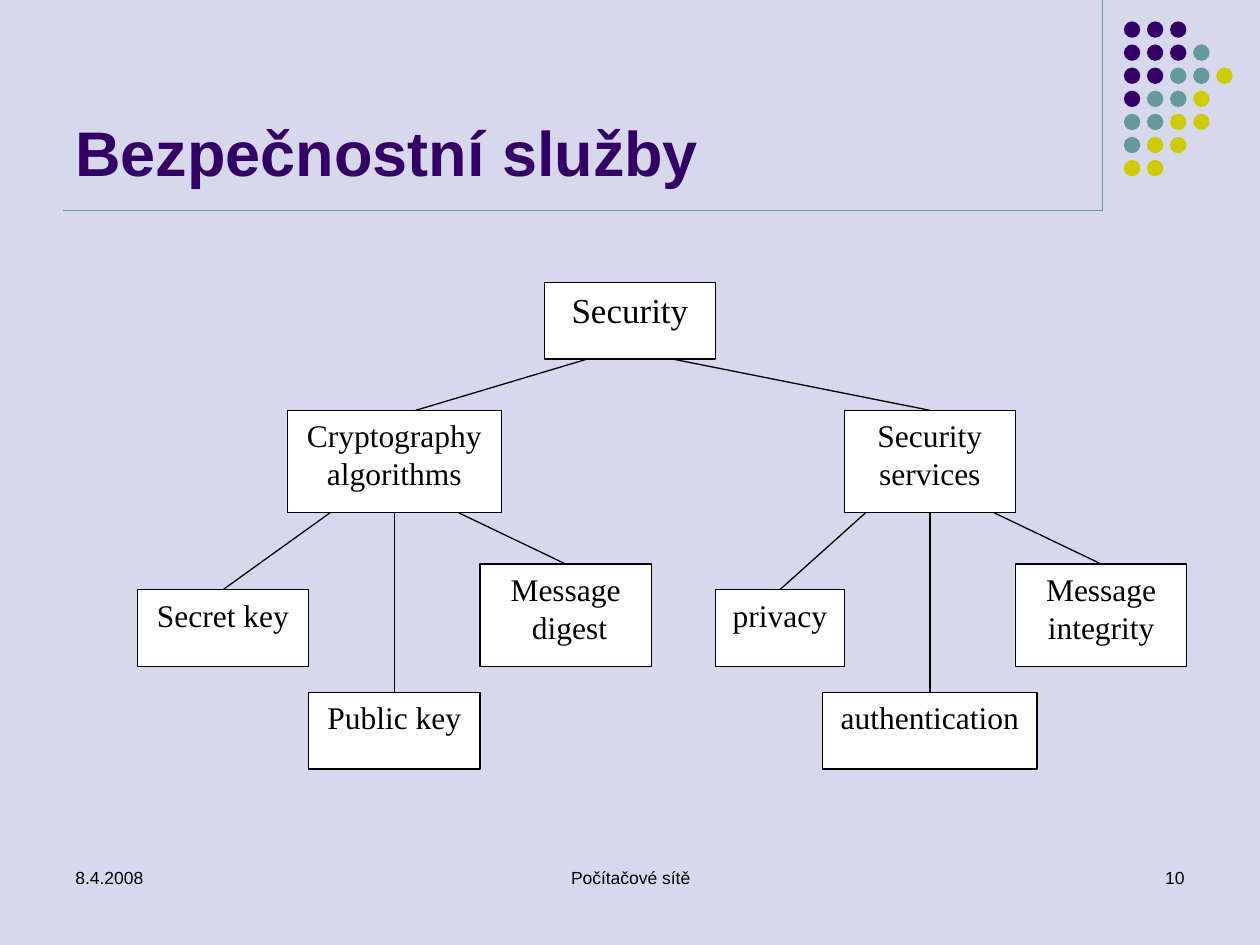
"""Build a slide with a tree of security services."""
from dataclasses import dataclass

from lxml import etree
from pptx import Presentation
from pptx.dml.color import RGBColor
from pptx.enum import shapes, text
from pptx.oxml import ns
from pptx.util import Inches, Pt


@dataclass(frozen=True)
class Theme:
    back: str = "D8D8EC"
    deep: str = "330066"
    teal: str = "669999"
    lime: str = "CCCC00"
    ink: str = "000000"
    paper: str = "FFFFFF"
    sans: str = "Arial"
    serif: str = "Times New Roman"
    title: int = 36
    root: int = 20
    node: int = 18
    foot: int = 10
    line: float = 0.75


T = Theme()
A = text.PP_ALIGN

TITLE = "Bezpečnostní služby"
FOOT = [
    ("8.4.2008", 0.5, 2.33, A.LEFT),
    ("Počítačové sítě", 3.42, 3.17, A.CENTER),
    ("10", 7.17, 2.33, A.RIGHT),
]
DOTS = ["ddd", "dddt", "ddttl", "dttl", "ttll", "tll", "ll"]
HUES = {"d": T.deep, "t": T.teal, "l": T.lime}

# name: label, column, row, columns wide, rows high
NODES = {
    "root": ("Security", 19, 0, 8, 3),
    "crypt": ("Cryptography\nalgorithms", 7, 5, 10, 4),
    "serve": ("Security\nservices", 33, 5, 8, 4),
    "priv": ("privacy", 27, 12, 6, 3),
    "auth": ("authentication", 32, 16, 10, 3),
    "whole": ("Message\nintegrity", 41, 11, 8, 4),
    "secret": ("Secret key", 0, 12, 8, 3),
    "public": ("Public key", 8, 16, 8, 3),
    "digest": ("Message\n digest", 16, 11, 8, 4),
}
# parent, columns from its left edge, child, columns from its left edge
LINKS = [
    ("root", 2, "crypt", 6), ("root", 6, "serve", 4),
    ("crypt", 2, "secret", 4), ("crypt", 5, "public", 4),
    ("crypt", 8, "digest", 4), ("serve", 1, "priv", 3),
    ("serve", 4, "auth", 5), ("serve", 7, "whole", 4),
]
LEFT, TOP, COL, ROW = 1.09, 2.24, 0.17, 0.61 / 3
STEP, DOT = 0.55 / 3, 0.13


def rgb(hue):
    return RGBColor.from_string(hue)


def write(shape, words, size=T.node, font=T.serif, hue=T.ink, bold=False,
          align=A.CENTER, anchor=text.MSO_ANCHOR.TOP):
    frame = shape.text_frame
    frame.word_wrap = True
    frame.vertical_anchor = anchor
    frame.text = words
    for para in frame.paragraphs:
        para.alignment = align
        for run in para.runs:
            run.font.size, run.font.name, run.font.bold = Pt(size), font, bold
            run.font.color.rgb = rgb(hue)


def label(slide, words, box, **form):
    write(slide.shapes.add_textbox(*map(Inches, box)), words, **form)


def draw(slide, kind, box, fill, edge=None):
    shape = slide.shapes.add_shape(kind, *map(Inches, box))
    shape.shadow.inherit = False
    shape.fill.solid()
    shape.fill.fore_color.rgb = rgb(fill)
    if edge:
        shape.line.color.rgb = rgb(edge)
        shape.line.width = Pt(T.line)
    else:
        shape.line.fill.background()
    return shape


def join(slide, ends, hue):
    line = slide.shapes.add_connector(
        shapes.MSO_CONNECTOR.STRAIGHT, *map(Inches, ends))
    line.line.color.rgb = rgb(hue)
    line.line.width = Pt(T.line)
    etree.SubElement(line._element.spPr, ns.qn("a:effectLst"))


def spot(col, row):
    return LEFT + col * COL, TOP + row * ROW


def frame(slide):
    join(slide, (8.75, 0, 8.75, 1.67), T.teal)
    join(slide, (0.5, 1.67, 8.75, 1.67), T.teal)
    for row, keys in enumerate(DOTS):
        for col, key in enumerate(keys):
            box = (8.92 + col * STEP, 0.17 + row * STEP, DOT, DOT)
            draw(slide, shapes.MSO_SHAPE.OVAL, box, HUES[key])
    for words, left, wide, align in FOOT:
        label(slide, words, (left, 6.83, wide, 0.5), size=T.foot,
              font=T.sans, align=align)
    label(slide, TITLE, (0.5, 0.13, 8.25, 1.42), size=T.title, font=T.sans,
          hue=T.deep, bold=True, align=A.LEFT,
          anchor=text.MSO_ANCHOR.BOTTOM)


def tree(slide):
    for name, (words, col, row, wide, high) in NODES.items():
        box = (*spot(col, row), wide * COL, high * ROW)
        shape = draw(slide, shapes.MSO_SHAPE.RECTANGLE, box, T.paper, T.ink)
        write(shape, words, size=T.root if name == "root" else T.node)
    for top, out, low, into in LINKS:
        _, col, row, _, high = NODES[top]
        _, end, base, _, _ = NODES[low]
        ends = (*spot(col + out, row + high), *spot(end + into, base))
        join(slide, ends, T.ink)


def main():
    deck = Presentation()
    deck.slide_width, deck.slide_height = Inches(10), Inches(7.5)
    slide = deck.slides.add_slide(deck.slide_layouts[6])
    slide.background.fill.solid()
    slide.background.fill.fore_color.rgb = rgb(T.back)
    frame(slide)
    tree(slide)
    deck.save("out.pptx")


if __name__ == "__main__":
    main()
